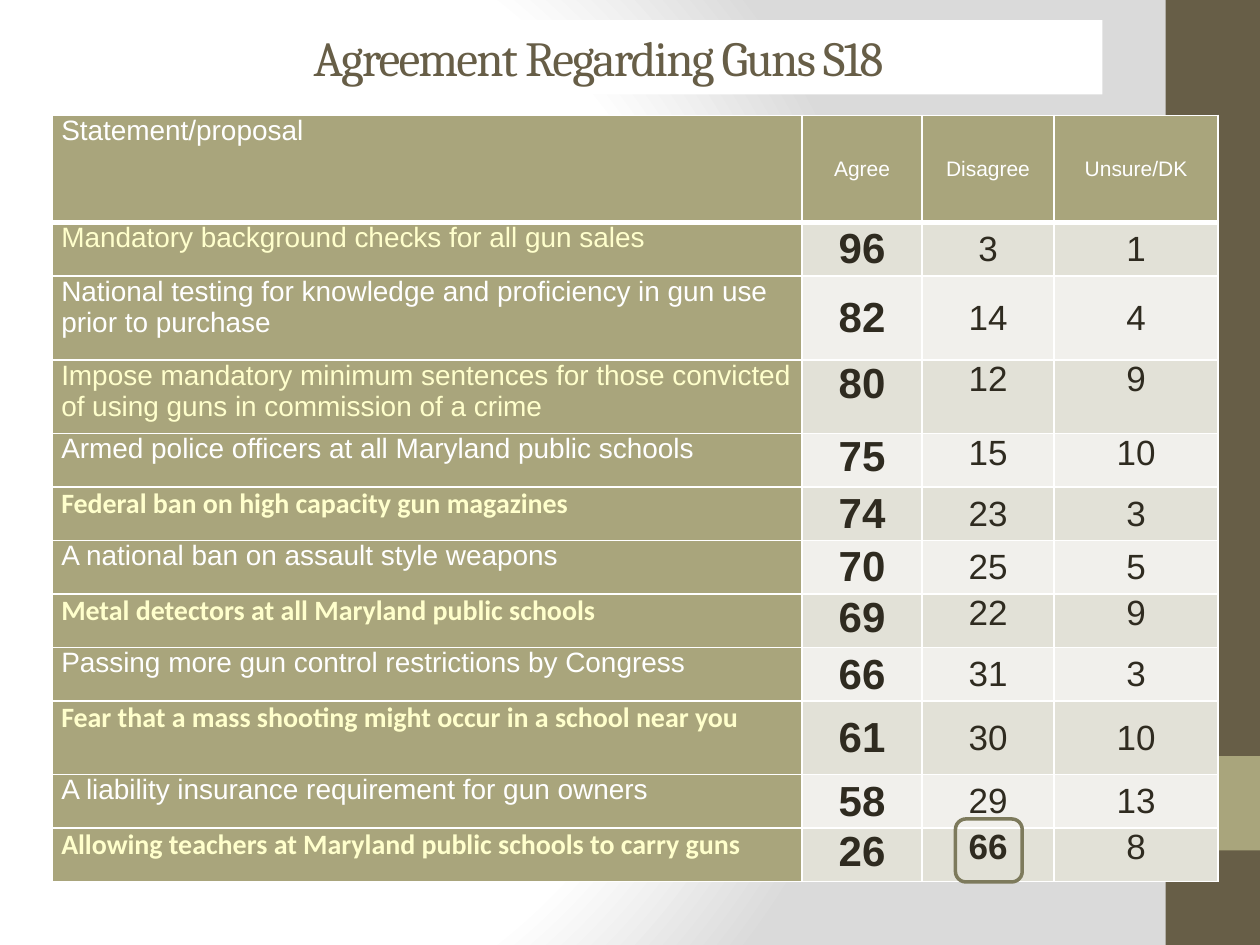
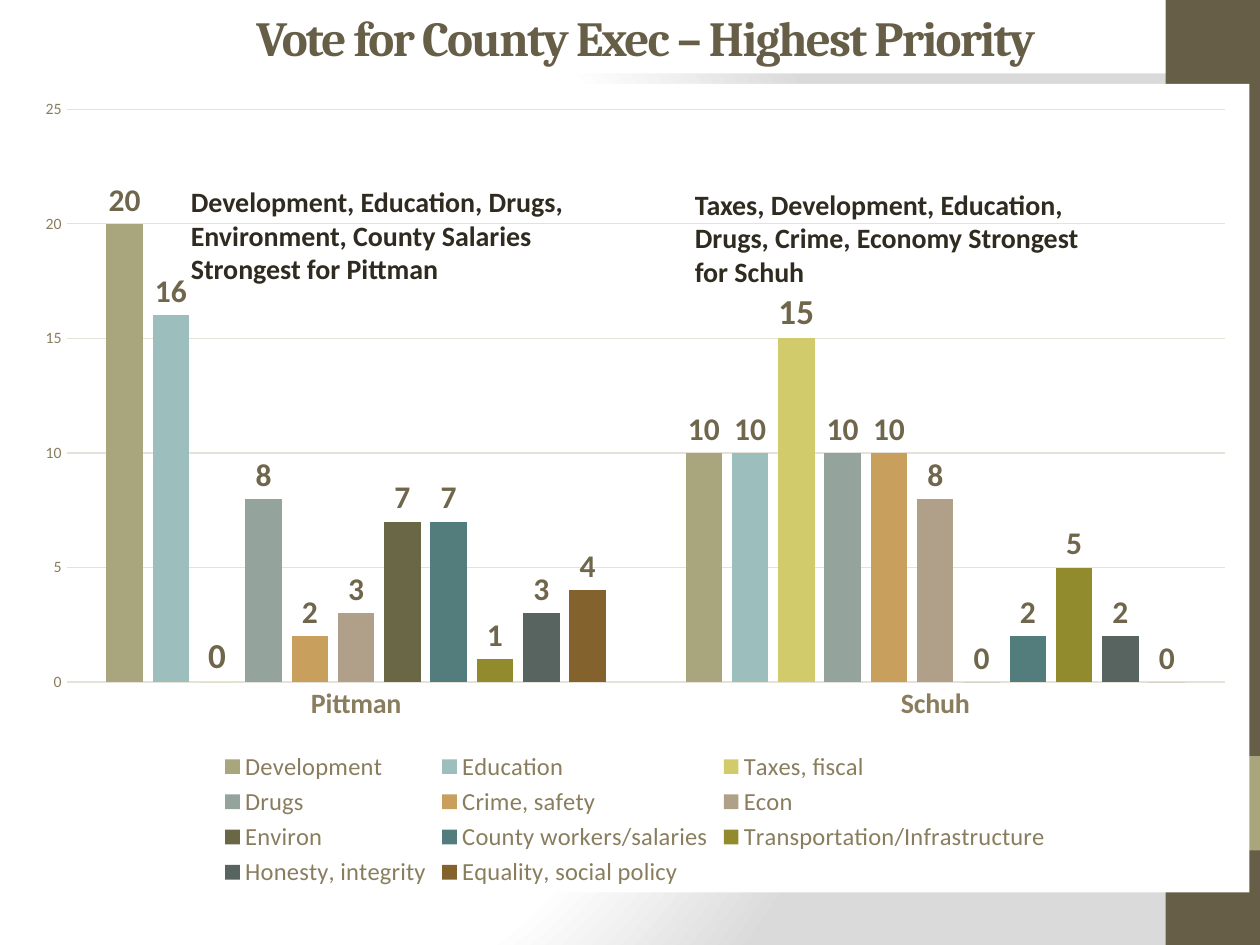
import pptx
import pptx.chart.data
import pptx.dml.color
import pptx.enum.chart
import pptx.enum.shapes
import pptx.enum.text
import pptx.oxml
import pptx.oxml.ns
import pptx.util

# Grid: 120 columns by 90 rows of equal square cells
SLIDE_WIDTH = pptx.util.Inches(10)
SLIDE_HEIGHT = pptx.util.Inches(7.5)
CELL = SLIDE_WIDTH / 120

OLIVE, SAGE, WHITE, INK = "675E47", "A9A57C", "FFFFFF", "2F2B20"
CREAM, DARK_STRIPE, LIGHT_STRIPE = "FFFFCC", "E2E1D7", "F1F0EC"
HIGHLIGHT, AXIS_TEXT, AXIS_LINE, LABEL_TEXT = "7D7A5C", "897D5D", "E5E2D9", "6F664C"

ALIGN = pptx.enum.text.PP_ALIGN
ANCHOR = pptx.enum.text.MSO_ANCHOR
SHAPE = pptx.enum.shapes.MSO_SHAPE
NAMESPACES = pptx.oxml.ns.nsdecls("a", "c")

TABLE_COLUMNS = [71.4, 11.4, 12.6, 15.6]
TABLE_HEIGHT = 73
SPECIAL_ROW_HEIGHTS = {0: 10.2, 2: 8, 3: 7, 9: 7}
TOP_ANCHORED_ROWS = {3, 4, 7, 11}
CALIBRI_ROWS = {5, 7, 9, 11}
GUN_TABLE = [
    ("Statement/proposal", "Agree", "Disagree", "Unsure/DK"),
    ("Mandatory background checks for all gun sales", 96, 3, 1),
    ("National testing for knowledge and proficiency in gun use prior to purchase", 82, 14, 4),
    ("Impose mandatory minimum sentences for those convicted of using guns "
     "in commission of a crime", 80, 12, 9),
    ("Armed police officers at all Maryland public schools", 75, 15, 10),
    ("Federal ban on high capacity gun magazines", 74, 23, 3),
    ("A national ban on assault style weapons", 70, 25, 5),
    ("Metal detectors at all Maryland public schools", 69, 22, 9),
    ("Passing more gun control restrictions by Congress", 66, 31, 3),
    ("Fear that a mass shooting might occur in a school near you", 61, 30, 10),
    ("A liability insurance requirement for gun owners", 58, 29, 13),
    ("Allowing teachers at Maryland public schools to carry guns", 26, 66, 8),
]

CANDIDATES = ["Pittman", "Schuh"]
PRIORITIES = [
    ("Development", (20, 10), "A9A57C"),
    ("Education", (16, 10), "9CBEBD"),
    ("Taxes, fiscal", (0, 15), "D2CB6C"),
    ("Drugs", (8, 10), "95A39D"),
    ("Crime, safety", (2, 10), "C89F5D"),
    ("Econ", (3, 8), "B1A089"),
    ("Environ", (7, 0), "6A6746"),
    ("County workers/salaries", (7, 2), "527D7C"),
    ("Transportation/Infrastructure", (1, 5), "928B2D"),
    ("Honesty, integrity", (3, 2), "57645F"),
    ("Equality, social policy", (4, 0), "83622D"),
]


def color(hex_string):
    return pptx.dml.color.RGBColor.from_string(hex_string)


def grid(*counts):
    return [pptx.util.Emu(round(count * CELL)) for count in counts]


def style_font(font, size, hex_color, name="Calibri", bold=False):
    font.size = pptx.util.Pt(size)
    font.name = name
    font.bold = bold
    font.color.rgb = color(hex_color)


def add_box(slide, position, fill=None, line=None, kind=SHAPE.RECTANGLE):
    shape = slide.shapes.add_shape(kind, *grid(*position))
    shape.shadow.inherit = False
    if fill:
        shape.fill.solid()
        shape.fill.fore_color.rgb = color(fill)
    else:
        shape.fill.background()
    if line:
        shape.line.color.rgb = color(line)
        shape.line.width = pptx.util.Pt(2)
    else:
        shape.line.fill.background()
    return shape


def add_background(slide):
    slide.background.fill.solid()
    properties = slide.element.find(".//" + pptx.oxml.ns.qn("p:bgPr"))
    stops = "".join(
        f'<a:gs pos="{share * 1000}"><a:srgbClr val="{shade}"/></a:gs>'
        for share, shade in [(0, WHITE), (75, WHITE), (100, "DADADA")])
    gradient = pptx.oxml.parse_xml(
        f'<a:gradFill {NAMESPACES} rotWithShape="1"><a:gsLst>{stops}</a:gsLst>'
        '<a:path path="circle"><a:fillToRect l="20000" t="50000" r="100000" b="50000"/>'
        '</a:path></a:gradFill>')
    properties.replace(properties[0], gradient)


def add_title(slide, text, position, bold):
    frame = add_box(slide, position, WHITE).text_frame
    frame.word_wrap = True
    frame.vertical_anchor = ANCHOR.MIDDLE
    paragraph = frame.paragraphs[0]
    paragraph.alignment = ALIGN.CENTER
    run = paragraph.add_run()
    run.text = text
    style_font(paragraph.font, 28, OLIVE, "Cambria", bold)
    run.font.size = pptx.util.Pt(28)
    run.font._element.set("spc", "-100")


def start_slide(presentation, title, title_position, bold=False):
    slide = presentation.slides.add_slide(presentation.slide_layouts[6])
    add_background(slide)
    add_box(slide, (111, 0, 9, 90), OLIVE)
    add_box(slide, (111, 72, 9, 9), SAGE)
    add_title(slide, title, title_position, bold)
    return slide


def add_note(slide, text, position):
    frame = slide.shapes.add_textbox(*grid(*position)).text_frame
    frame.word_wrap = True
    frame.text = text
    style_font(frame.paragraphs[0].font, 16, INK, bold=True)


def set_borders(cell, bottom_width):
    properties = cell._tc.get_or_add_tcPr()
    for index, (side, width) in enumerate(
            [("lnL", 1), ("lnR", 1), ("lnT", 1), ("lnB", bottom_width)]):
        properties.insert(index, pptx.oxml.parse_xml(
            f'<a:{side} {NAMESPACES} w="{pptx.util.Pt(width)}"><a:solidFill>'
            f'<a:srgbClr val="{WHITE}"/></a:solidFill></a:{side}>'))


def cell_look(row, column):
    """Return fill, text size, text colour, font name and bold for a table cell."""
    if row == 0:
        return SAGE, 12 if column else 16, WHITE, "Arial", False
    if column == 0:
        calibri = row in CALIBRI_ROWS
        return SAGE, 16, CREAM if row % 2 else WHITE, "Calibri" if calibri else "Arial", calibri
    stripe = DARK_STRIPE if row % 2 else LIGHT_STRIPE
    opposed_majority = (row, column) == (11, 2)
    return stripe, 24 if column == 1 else 20, INK, "Arial", column == 1 or opposed_majority


def fill_cell(cell, row, column, value):
    fill, size, text_color, font_name, bold = cell_look(row, column)
    cell.fill.solid()
    cell.fill.fore_color.rgb = color(fill)
    cell.margin_left = cell.margin_right = pptx.util.Inches(0.07)
    cell.margin_top = cell.margin_bottom = 0
    centred = column > 0 and row not in TOP_ANCHORED_ROWS
    cell.vertical_anchor = ANCHOR.MIDDLE if centred else ANCHOR.TOP
    cell.text = str(value)
    paragraph = cell.text_frame.paragraphs[0]
    paragraph.alignment = ALIGN.CENTER if column else ALIGN.LEFT
    style_font(paragraph.font, size, text_color, font_name, bold)
    set_borders(cell, 3 if row == 0 else 1)


def add_gun_table(slide):
    table = slide.shapes.add_table(
        len(GUN_TABLE), len(TABLE_COLUMNS),
        *grid(5, 11, sum(TABLE_COLUMNS), TABLE_HEIGHT)).table
    table.first_row = table.horz_banding = False
    for column, width in zip(table.columns, grid(*TABLE_COLUMNS)):
        column.width = width
    regular_height = ((TABLE_HEIGHT - sum(SPECIAL_ROW_HEIGHTS.values()))
                      / (len(GUN_TABLE) - len(SPECIAL_ROW_HEIGHTS)))
    for row, values in enumerate(GUN_TABLE):
        table.rows[row].height = grid(SPECIAL_ROW_HEIGHTS.get(row, regular_height))[0]
        for column, value in enumerate(values):
            fill_cell(table.cell(row, column), row, column, value)


def style_line(line):
    line.color.rgb = color(AXIS_LINE)
    line.width = pptx.util.Pt(0.75)


def style_axes(chart):
    for axis, size, bold in [(chart.category_axis, 16, True), (chart.value_axis, 9, False)]:
        axis.major_tick_mark = axis.minor_tick_mark = pptx.enum.chart.XL_TICK_MARK.NONE
        style_font(axis.tick_labels.font, size, AXIS_TEXT, bold=bold)
    style_line(chart.category_axis.format.line)
    values = chart.value_axis
    values.minimum_scale, values.maximum_scale, values.major_unit = 0, 25, 5
    values.format.line.fill.background()
    style_line(values.major_gridlines.format.line)


def add_priority_chart(slide):
    data = pptx.chart.data.CategoryChartData()
    data.categories = CANDIDATES
    for name, values, _ in PRIORITIES:
        data.add_series(name, values)
    chart = slide.shapes.add_chart(
        pptx.enum.chart.XL_CHART_TYPE.COLUMN_CLUSTERED, *grid(2, 8, 117, 77), data).chart
    chart.has_title = False
    style_font(chart.font, 10, INK)
    chart._chartSpace.chart.addnext(pptx.oxml.parse_xml(
        f'<c:spPr {NAMESPACES}><a:solidFill><a:srgbClr val="{WHITE}"/></a:solidFill>'
        '<a:ln><a:noFill/></a:ln></c:spPr>'))
    style_axes(chart)

    chart.has_legend = True
    chart.legend.position = pptx.enum.chart.XL_LEGEND_POSITION.BOTTOM
    chart.legend.include_in_layout = False
    style_font(chart.legend.font, 14, AXIS_TEXT)

    plot = chart.plots[0]
    plot.gap_width, plot.overlap = 219, -27
    plot.vary_by_categories = False
    for series, (name, _, series_color) in zip(plot.series, PRIORITIES):
        series.format.fill.solid()
        series.format.fill.fore_color.rgb = color(series_color)
        labels = series.data_labels
        labels.show_value = True
        labels.position = pptx.enum.chart.XL_LABEL_POSITION.OUTSIDE_END
        style_font(labels.font, 20 if name == "Taxes, fiscal" else 18, LABEL_TEXT, bold=True)


def main():
    presentation = pptx.Presentation()
    presentation.slide_width = SLIDE_WIDTH
    presentation.slide_height = SLIDE_HEIGHT

    # Agreement table, with the one opposed majority outlined
    slide = start_slide(presentation, "Agreement Regarding Guns S18", (9, 1.92, 96, 7.08))
    add_gun_table(slide)
    add_box(slide, (91, 78, 6.36, 6), line=HIGHLIGHT, kind=SHAPE.ROUNDED_RECTANGLE)

    # Priorities by candidate
    slide = start_slide(presentation, "Vote for County Exec – Highest Priority",
                        (12, 0, 99, 7), bold=True)
    add_priority_chart(slide)
    add_note(slide, "Development, Education, Drugs, Environment, County Salaries "
                    "Strongest for Pittman", (17, 17, 42, 9))
    add_note(slide, "Taxes, Development, Education, Drugs, Crime, Economy Strongest "
                    "for Schuh", (65, 17.25, 42, 9))

    presentation.save("out.pptx")


if __name__ == "__main__":
    main()
